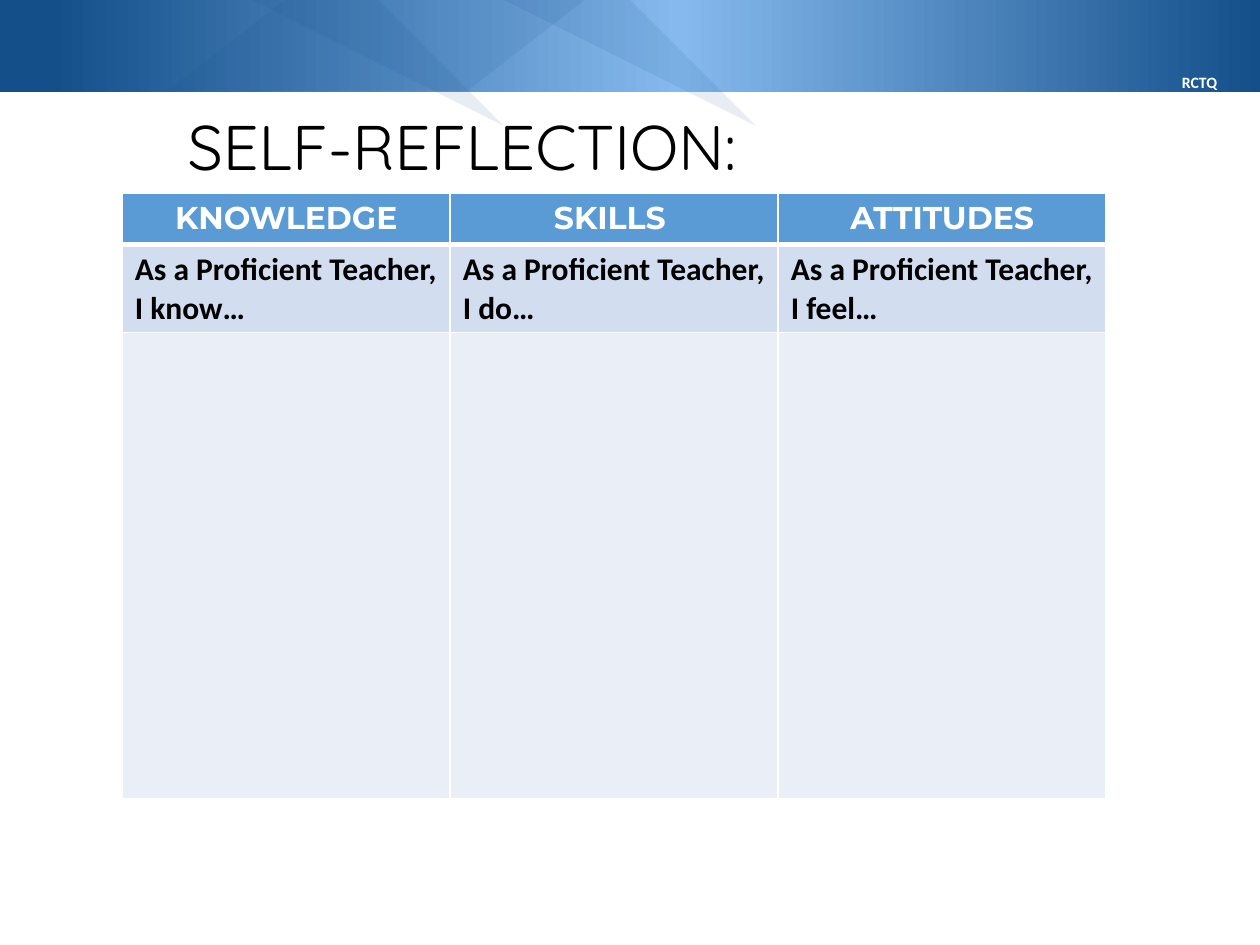
from copy import deepcopy

from lxml.etree import SubElement
from pptx import Presentation
from pptx.dml.color import RGBColor
from pptx.enum.shapes import MSO_SHAPE
from pptx.enum.text import PP_ALIGN
from pptx.oxml.ns import qn
from pptx.util import Inches, Pt

NAVY, SKY, WHITE, BLACK = "144F8A", "86BAEE", "FFFFFF", "000000"
HEADS = ["KNOWLEDGE", "SKILLS ", "ATTITUDES"]
VERBS = ["know", "do", "feel"]
ROWS = [(0.41, "5B9BD5"), (0.7, "D2DEEF"), (3.7, "EAEFF7")]
FACETS = [
    [(4.02, 0.03), (5.09, 0.01), (6.46, 0.71), (5.53, 0.71)],
    [(2.03, 0), (3.05, 0), (4.02, 0.72), (3.62, 0.67)],
]


def color(code):
    """Turn a hex string into a colour."""
    return RGBColor.from_string(code)


def write(frame, lines, size, face, code, bold=False, align=PP_ALIGN.LEFT):
    """Fill a text frame with evenly styled paragraphs."""
    frame.text = "\n".join(lines)
    for para in frame.paragraphs:
        para.alignment = align
        para.font.size = Pt(size)
        para.font.name = face
        para.font.bold = bold
        para.font.color.rgb = color(code)


def label(slide, box, text, wrap, **style):
    """Add a text box holding one line."""
    frame = slide.shapes.add_textbox(*map(Inches, box)).text_frame
    frame.word_wrap = wrap
    write(frame, [text], **style)


def band(slide):
    """Add the strip with its gradient along the top."""
    strip = slide.shapes.add_shape(MSO_SHAPE.RECTANGLE, 0, 0, Inches(10), Inches(0.73))
    strip.shadow.inherit = False
    strip.line.fill.background()
    strip.fill.gradient()
    strip.fill.gradient_angle = 0
    stops = strip._element.spPr.find(".//" + qn("a:gsLst"))
    stops.append(deepcopy(stops[-1]))
    for stop, (place, code) in zip(
        strip.fill.gradient_stops, [(0.04, NAVY), (0.54, SKY), (1, NAVY)]
    ):
        stop.position = place
        stop.color.rgb = color(code)


def tint(shape):
    """Give a shape a faint navy fill without outline."""
    shape.shadow.inherit = False
    shape.line.fill.background()
    shape.fill.solid()
    shape.fill.fore_color.rgb = color(NAVY)
    tone = shape._element.spPr.find(qn("a:solidFill"))[0]
    SubElement(tone, qn("a:alpha"), val="10000")


def facets(slide):
    """Add the slanted facets over the strip."""
    slant = slide.shapes.add_shape(
        MSO_SHAPE.PARALLELOGRAM, Inches(1.33), 0, Inches(3.31), Inches(0.72)
    )
    slant.adjustments[0] = 1.29
    tint(slant)
    for start, *rest in FACETS:
        pen = slide.shapes.build_freeform(*start, scale=Inches(1))
        pen.add_line_segments(rest, close=True)
        tint(pen.convert_to_shape())


def edge(cell, side, width):
    """Draw one white border of a cell."""
    line = SubElement(cell._tc.get_or_add_tcPr(), qn("a:ln" + side), w=str(Pt(width)))
    SubElement(SubElement(line, qn("a:solidFill")), qn("a:srgbClr"), val=WHITE)


def grid(slide):
    """Add the table for the three kinds of reflection."""
    high = sum(size for size, _ in ROWS)
    table = slide.shapes.add_table(
        3, 3, Inches(0.97), Inches(1.53), Inches(7.81), Inches(high)
    ).table
    for y, (size, code) in enumerate(ROWS):
        table.rows[y].height = Inches(size)
        for x in range(3):
            cell = table.cell(y, x)
            for side in "LRTB":
                edge(cell, side, 3 if (y, side) in [(0, "B"), (1, "T")] else 1)
            cell.fill.solid()
            cell.fill.fore_color.rgb = color(code)
    for x, (head, verb) in enumerate(zip(HEADS, VERBS)):
        write(table.cell(0, x).text_frame, [head], 18, "Montserrat", WHITE,
              True, PP_ALIGN.CENTER)
        write(table.cell(1, x).text_frame, ["As a Proficient Teacher,", f"I {verb}…"],
              18, "Calibri", BLACK, True)


def main():
    """Build and save the slide."""
    deck = Presentation()
    deck.slide_width, deck.slide_height = Inches(10), Inches(7.5)
    slide = deck.slides.add_slide(deck.slide_layouts[6])
    band(slide)
    facets(slide)
    label(slide, (9.04, 0.53, 0.96, 0.25), "RCTQ", True, size=9, face="Calibri",
          code=WHITE, bold=True, align=PP_ALIGN.CENTER)
    grid(slide)
    label(slide, (1.39, 0.8, 5.09, 0.71), "SELF-REFLECTION:", False, size=36,
          face="Quicksand", code=BLACK)
    deck.save("out.pptx")


if __name__ == "__main__":
    main()
